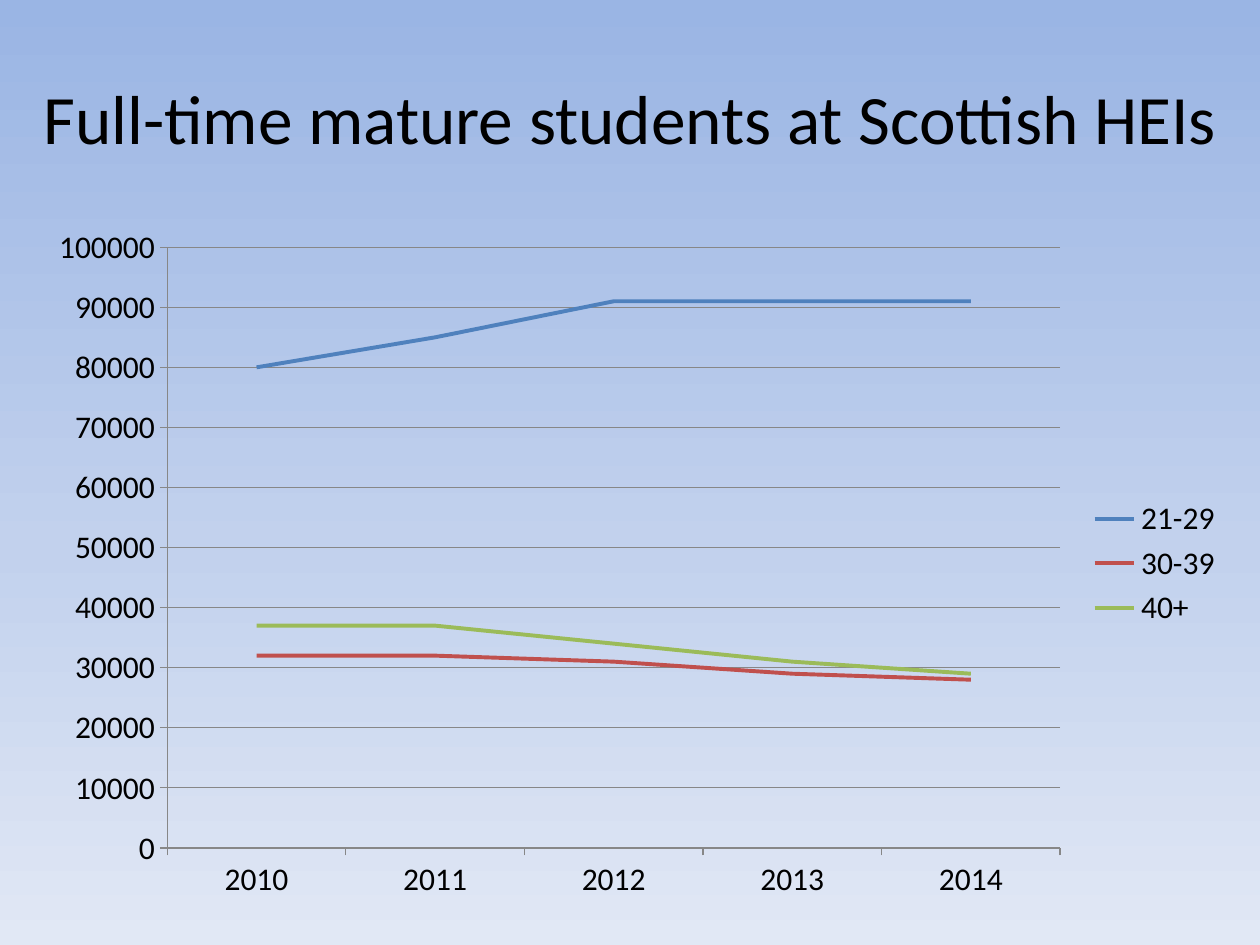
from copy import deepcopy

from pptx import Presentation
from pptx.chart.data import CategoryChartData
from pptx.dml.color import RGBColor
from pptx.enum.chart import XL_CHART_TYPE as ChartType
from pptx.enum.chart import XL_LEGEND_POSITION as LegendPos
from pptx.enum.chart import XL_TICK_MARK as Tick
from pptx.enum.text import MSO_ANCHOR as Anchor
from pptx.enum.text import PP_ALIGN as Align
from pptx.util import Pt

FONT = "Calibri"
COLORS = {
    "text": "000000",
    "axis": "878787",
    "21-29": "4F81BD",
    "30-39": "C0504D",
    "40+": "9BBB59",
    "sky_top": "9AB5E4",
    "sky_middle": "C2D1ED",
    "sky_bottom": "E1E8F5",
}
BACKGROUND_STOPS = [(0, "sky_top"), (0.58, "sky_middle"), (1, "sky_bottom")]
YEARS = ["2010", "2011", "2012", "2013", "2014"]
STUDENTS = {
    "21-29": [80000, 85000, 91000, 91000, 91000],
    "30-39": [32000, 32000, 31000, 29000, 28000],
    "40+": [37000, 37000, 34000, 31000, 29000],
}


def rgb(name):
    return RGBColor.from_string(COLORS[name])


def style_font(font, size):
    font.name = FONT
    font.size = Pt(size)
    font.color.rgb = rgb("text")


def style_line(line, color, width):
    line.color.rgb = rgb(color)
    line.width = Pt(width)


def set_background(s):
    fill = s.background.fill
    fill.gradient()
    fill.gradient_angle = 270
    first = s._element.xpath(".//p:bg//a:gs")[0]
    first.addnext(deepcopy(first))
    for stop, (position, color) in zip(fill.gradient_stops, BACKGROUND_STOPS):
        stop.position = position
        stop.color.rgb = rgb(color)


def add_title(s, text):
    sp = s.shapes.add_textbox(Pt(0), Pt(21.6), Pt(720), Pt(90))
    tf = sp.text_frame
    tf.word_wrap = True
    tf.vertical_anchor = Anchor.MIDDLE
    tf.text = text
    p = tf.paragraphs[0]
    p.alignment = Align.CENTER
    style_font(p.runs[0].font, 39.6)


def style_axis(axis):
    axis.major_tick_mark = Tick.OUTSIDE
    axis.minor_tick_mark = Tick.NONE
    style_line(axis.format.line, "axis", 0.75)


def add_line_chart(s):
    data = CategoryChartData(number_format="General")
    data.categories = YEARS
    for name, values in STUDENTS.items():
        data.add_series(name, values)
    chart = s.shapes.add_chart(
        ChartType.LINE, Pt(20), Pt(122.4), Pt(686), Pt(399), data
    ).chart
    style_font(chart.font, 18)
    chart.has_title = False
    chart.has_legend = True
    chart.legend.position = LegendPos.RIGHT
    chart.legend.include_in_layout = False

    style_axis(chart.category_axis)
    values = chart.value_axis
    style_axis(values)
    values.minimum_scale = 0
    values.maximum_scale = 100000
    values.major_unit = 10000
    values.has_major_gridlines = True
    style_line(values.major_gridlines.format.line, "axis", 0.75)

    plot = chart.plots[0]
    plot.vary_by_categories = False
    for series in plot.series:
        series.smooth = False
        style_line(series.format.line, series.name, 2.25)


def main():
    prs = Presentation()
    prs.slide_width = Pt(720)
    prs.slide_height = Pt(540)
    s = prs.slides.add_slide(prs.slide_layouts[6])
    set_background(s)
    add_title(s, "Full-time mature students at Scottish HEIs")
    add_line_chart(s)
    prs.save("out.pptx")


if __name__ == "__main__":
    main()
